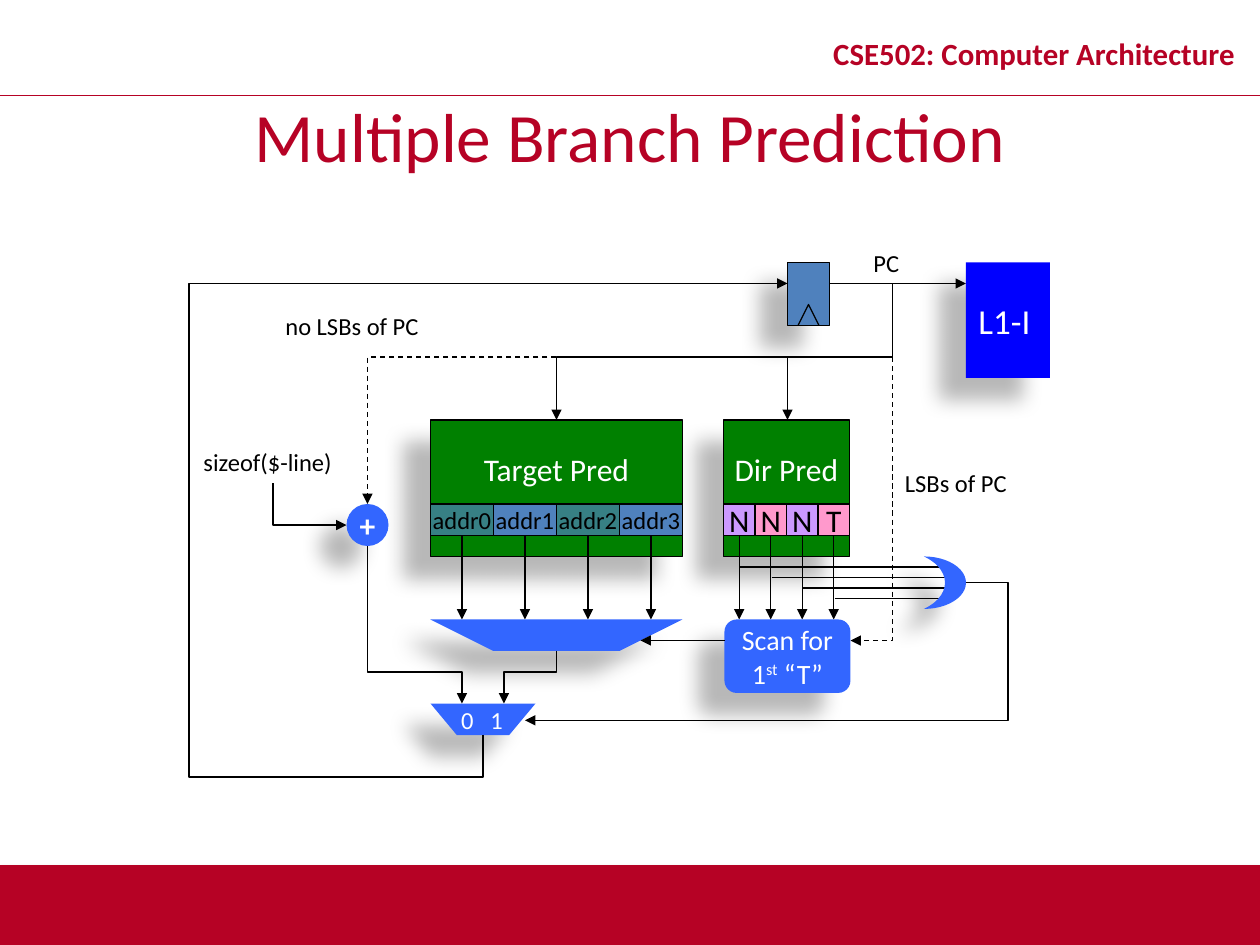
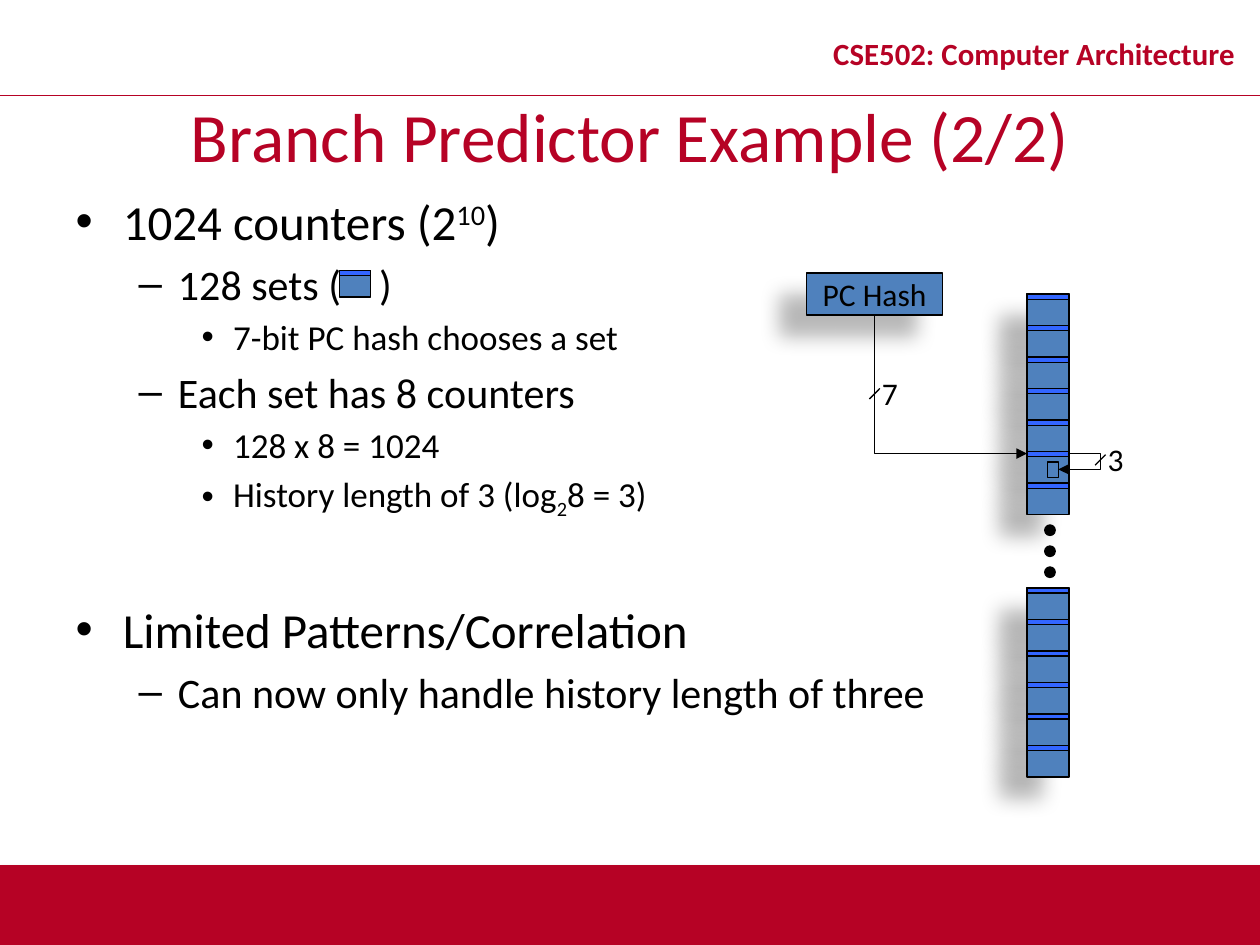
import dataclasses

import lxml.etree
import pptx
import pptx.dml.color
import pptx.enum.dml
import pptx.enum.shapes
import pptx.enum.text
import pptx.oxml.ns
import pptx.util

RGB = pptx.dml.color.RGBColor
SHAPE = pptx.enum.shapes.MSO_SHAPE
ALIGN = pptx.enum.text.PP_ALIGN
ANCHOR = pptx.enum.text.MSO_ANCHOR
qn = pptx.oxml.ns.qn

CRIMSON = RGB(0xB6, 0x02, 0x25)
BLACK = RGB(0, 0, 0)
WHITE = RGB(255, 255, 255)
GREEN = RGB(0, 0x80, 0)
STEEL = RGB(0x4F, 0x81, 0xBD)
ROYAL = RGB(0x33, 0x66, 0xFF)
BLUE = RGB(0, 0, 255)
LILAC = RGB(0xCC, 0x99, 0xFF)
PINK = RGB(0xFF, 0x99, 0xCC)

FONT = "Calibri"
CELL = pptx.util.Inches(1) // 12  # the slide is a grid of 120 columns by 90 rows
COLUMNS, ROWS = 120, 90
# Shadows: opacity in percent, blur and distance in points, angle in degrees
DEEP_SHADOW = (28, 11.8, 19.7, 141)
BAND_SHADOW = (35, 3.1, 1.8, 90)
SUPER, SUB = {"baseline": "30000"}, {"baseline": "-25000"}
WIDE = {"spc": "1630"}


@dataclasses.dataclass
class Box:
    """A region of a page; its parts are placed from its top left cell."""
    page: object
    left: float = 0
    top: float = 0

    def at(self, col, row):
        return round((self.left + col) * CELL), round((self.top + row) * CELL)

    def frame(self, col, row, width, height):
        return *self.at(col, row), round(width * CELL), round(height * CELL)


def write(frame, text, size=18, color=BLACK, bold=None, align=None, level=0,
          before=0, spacing=None):
    """Add one paragraph; text is a string or a list of (string, attributes)."""
    first = frame.paragraphs[0]
    para = frame.add_paragraph() if first.runs else first
    para.level, para.alignment = level, align
    para.space_before = pptx.util.Pt(before)
    para.line_spacing = spacing
    for words, attributes in [(text, {})] if isinstance(text, str) else text:
        span = para.add_run()
        span.text = words
        span.font.name, span.font.size = FONT, pptx.util.Pt(size)
        span.font.bold, span.font.color.rgb = bold, color
        for key, value in attributes.items():
            span._r.get_or_add_rPr().set(key, value)


def add_shadow(shape, shadow):
    shape.shadow.inherit = False
    if shadow:
        opacity, blur, distance, angle = shadow
        effects = shape.element.spPr.find(qn("a:effectLst"))
        outer = lxml.etree.SubElement(
            effects, qn("a:outerShdw"), blurRad=str(pptx.util.Pt(blur)),
            dist=str(pptx.util.Pt(distance)), dir=str(angle * 60000),
            algn="ctr", rotWithShape="0")
        tint = lxml.etree.SubElement(outer, qn("a:srgbClr"), val="000000")
        lxml.etree.SubElement(tint, qn("a:alpha"), val=str(opacity * 1000))


def paint(shape, fill, line=None, shadow=None):
    if fill is None:
        shape.fill.background()
    else:
        shape.fill.solid()
        shape.fill.fore_color.rgb = fill
    if line is None:
        shape.line.fill.background()
    else:
        shape.line.color.rgb = line
        shape.line.width = pptx.util.Pt(0.75)
    add_shadow(shape, shadow)


def add_block(box, col, row, width, height, fill, line=BLACK, shadow=None,
              preset=SHAPE.RECTANGLE):
    shape = box.page.shapes.add_shape(preset, *box.frame(col, row, width, height))
    paint(shape, fill, line, shadow)
    frame = shape.text_frame
    frame.word_wrap = False
    frame.vertical_anchor = ANCHOR.MIDDLE
    frame.margin_left = frame.margin_right = frame.margin_top = frame.margin_bottom = 0
    return shape


def add_label(box, col, row, width, height, text, size=14):
    label = box.page.shapes.add_textbox(*box.frame(col, row, width, height))
    label.text_frame.word_wrap = False
    label.text_frame.auto_size = pptx.enum.text.MSO_AUTO_SIZE.SHAPE_TO_FIT_TEXT
    write(label.text_frame, text, size)


def add_outline(box, points, closed):
    first, *rest = [box.at(*point) for point in points]
    builder = box.page.shapes.build_freeform(*first)
    builder.add_line_segments(rest, close=closed)
    return builder.convert_to_shape()


def add_wire(box, *points, arrow=True, dashed=False, color=BLACK, width=0.75):
    """Draw a straight line as a connector and a bent one as an open outline."""
    if len(points) == 2:
        wire = box.page.shapes.add_connector(
            pptx.enum.shapes.MSO_CONNECTOR.STRAIGHT,
            *box.at(*points[0]), *box.at(*points[1]))
    else:
        wire = add_outline(box, points, closed=False)
        paint(wire, None, color)
    wire.line.color.rgb, wire.line.width = color, pptx.util.Pt(width)
    if dashed:
        wire.line.dash_style = pptx.enum.dml.MSO_LINE.DASH
    if arrow:
        lxml.etree.SubElement(wire.line._get_or_add_ln(), qn("a:tailEnd"), type="triangle")
    if len(points) == 2:
        lxml.etree.SubElement(wire.element.spPr, qn("a:effectLst"))


def add_mux(box, *corners):
    paint(add_outline(box, corners, closed=True), ROYAL, shadow=DEEP_SHADOW)


# Shared look
def dress_master(deck, page):
    """Draw band, rule and course name, then hand them to the slide master."""
    box = Box(page)
    count = len(page.shapes)
    add_block(box, 0, 82.4, COLUMNS, ROWS - 82.4, CRIMSON, None, BAND_SHADOW)
    add_wire(box, (0, 9.1), (COLUMNS, 9.1), arrow=False, color=CRIMSON, width=1)
    header = page.shapes.add_textbox(*box.frame(77, 1.6, 43, 7.5)).text_frame
    header.word_wrap = True
    header.vertical_anchor = ANCHOR.MIDDLE
    write(header, "CSE502: Computer Architecture", 17.6, CRIMSON, True,
          ALIGN.CENTER, spacing=0.8)
    for shape in list(page.shapes)[count:]:
        deck.slide_master.shapes.element.append(shape.element)


def place_holder(holder, box, *place):
    holder.left, holder.top, holder.width, holder.height = box.frame(*place)
    holder.text_frame.auto_size = pptx.enum.text.MSO_AUTO_SIZE.NONE
    return holder.text_frame


def add_page(deck, layout, title):
    page = deck.slides.add_slide(deck.slide_layouts.get_by_name(layout))
    frame = place_holder(page.shapes.title, Box(page), 0, 9.1, COLUMNS, 7.5)
    frame.vertical_anchor = ANCHOR.MIDDLE
    write(frame, title, 39.6, CRIMSON, align=ALIGN.CENTER)
    return page


# Regions of the prediction diagram
def draw_predictor(box, name, entries, width, fills, size, opacity):
    """A predictor whose entries each send an arrow down."""
    body = add_block(box, 0, 0, width * len(entries), 13, GREEN, shadow=DEEP_SHADOW)
    body.text_frame.margin_bottom = round(3.6 * CELL)
    write(body.text_frame, name, 18, WHITE, align=ALIGN.CENTER)
    for index, entry in enumerate(entries):
        fill = fills[index % 2]
        cell = add_block(box, index * width, 8, width, 3, fill)
        if index % 2 == 0 and opacity < 100:
            tint = cell.element.spPr.find(qn("a:solidFill"))[0]
            lxml.etree.SubElement(tint, qn("a:alpha"), val=str(opacity * 1000))
        write(cell.text_frame, entry, size, align=ALIGN.CENTER)
        middle = (index + 0.5) * width
        add_wire(box, (middle, 11), (middle, 19))


def draw_fetch(box):
    """PC register feeding the instruction cache."""
    add_block(box, 0, 2, 4, 6, STEEL, shadow=DEEP_SHADOW)
    add_wire(box, (1, 8), (2, 6), (3, 8), arrow=False)
    add_wire(box, (4, 4), (17, 4))
    cache = add_block(box, 17, 2, 8, 11, BLUE, None, DEEP_SHADOW)
    cache.text_frame.margin_left = pptx.util.Inches(0.1)
    cache.text_frame.word_wrap = True
    write(cache.text_frame, "L1-I", 20, WHITE, align=ALIGN.LEFT)
    add_label(box, 7, 0, 5.3, 4, "PC")
    # PC to both predictors, and its low bits to the scan
    add_wire(box, (10, 4), (10, 11), (0, 11), (0, 17))
    add_wire(box, (0, 11), (-22, 11), (-22, 17))
    add_wire(box, (10, 11), (10, 38), (6, 38), dashed=True)
    add_label(box, 10, 21, 13, 4, "LSBs of PC")


def draw_adder(box):
    """Sequential address: PC without low bits plus the line size."""
    adder = add_block(box, 15, 19, 4, 4, ROYAL, None, DEEP_SHADOW, SHAPE.OVAL)
    write(adder.text_frame, "+", 18, WHITE, True, ALIGN.CENTER)
    add_label(box, 0.2, 13, 14.8, 4, "sizeof($-line)")
    add_wire(box, (8, 17), (8, 21), (15, 21))
    add_wire(box, (35, 5), (17, 5), (17, 19), dashed=True)
    add_label(box, 8, 0, 16, 4, "no LSBs of PC")
    add_wire(box, (17, 23), (17, 35), (26, 35), (26, 38))


def draw_selection(box):
    """Target mux, scan for the first taken branch, and next-PC mux."""
    scan = add_block(box, 28, 0, 12, 7, ROYAL, None, DEEP_SHADOW, SHAPE.ROUNDED_RECTANGLE)
    for line in ("Scan for", [("1", {}), ("st", SUPER), (" “T”", {})]):
        write(scan.text_frame, line, 16, WHITE, align=ALIGN.CENTER)
    add_mux(box, (0, 0), (6, 3), (18, 3), (24, 0))
    add_wire(box, (28, 2), (20, 2))
    add_mux(box, (0, 8), (2.5, 11), (7.5, 11), (10, 8))
    for col, digit in ((2.5, "0"), (5.3, "1")):
        port = add_block(box, col, 8, 2, 3, None, None)
        write(port.text_frame, digit, 14, WHITE, align=ALIGN.CENTER)
    add_wire(box, (12, 3), (12, 5), (7, 5), (7, 8))
    add_wire(box, (5, 11), (5, 15), (-23, 15), (-23, -32), (34, -32))


def draw_any_taken(box):
    """OR of the directions, steering the next-PC mux."""
    for index, end in enumerate((19.5, 20.5, 20.5, 19.5)):
        add_wire(box, (3 * index, index + 1), (end, index + 1), arrow=False)
    gate = add_block(box, 17.5, 0, 4, 5, ROYAL, None, DEEP_SHADOW, SHAPE.MOON)
    gate.element.spPr.get_or_add_xfrm().set("flipH", "1")
    add_wire(box, (21.5, 2.5), (25.5, 2.5), (25.5, 15.6), (-20.5, 15.6))


def build_prediction(page):
    draw_predictor(Box(page, 68.9, 40), "Dir Pred", "NNNT", 3, (LILAC, PINK), 18, 100)
    draw_predictor(Box(page, 41, 40), "Target Pred", [f"addr{n}" for n in range(4)],
                   6, (STEEL, STEEL), 14, 70)
    draw_fetch(Box(page, 75, 23))
    draw_selection(Box(page, 41, 59))
    draw_adder(Box(page, 18, 29))
    draw_any_taken(Box(page, 70.5, 53))


# Regions of the predictor example
def draw_set(box, width=4, height=3, shadow=DEEP_SHADOW):
    add_block(box, 0, 0, width, height, STEEL, shadow=shadow)
    add_block(box, 0, 0, width, height / 6, ROYAL)


def draw_bit_count(box, digit):
    """Slash across a wire, with the number of bits."""
    add_wire(box, (0, 3), (1, 2), arrow=False)
    add_label(box, 0, 0, 4, 4.8, digit, 18)


def draw_counters(box):
    """PC hash choosing one set, and history choosing one counter."""
    for index in range(3):
        add_block(box, 22.7, 24 + 2 * index, 1, 1, BLACK, preset=SHAPE.OVAL)
    pc_hash = add_block(box, 0, 0, 13, 4, STEEL, shadow=DEEP_SHADOW)
    write(pc_hash.text_frame, "PC Hash", align=ALIGN.CENTER)
    for top, count in ((2, 7), (30, 6)):
        for index in range(count):
            draw_set(Box(box.page, box.left + 21, box.top + top + 3 * index))
    add_wire(box, (6.5, 4), (6.5, 17.2), (21, 17.2))
    draw_bit_count(Box(box.page, box.left + 6, box.top + 9), "7")
    add_block(box, 23, 18, 1, 1.5, STEEL)
    add_wire(box, (25, 17.2), (28, 17.2), (28, 18.7), (24, 18.7))
    draw_bit_count(Box(box.page, box.left + 27.5, box.top + 15.3), "3")


def build_example(page):
    points = [
        (0, [("1024 counters (2", {}), ("10", SUPER), (")", {})]),
        (1, [("128 sets (", {}), (" ", WIDE), (")", {})]),
        (2, "7-bit PC hash chooses a set"),
        (1, "Each set has 8 counters"),
        (2, "128 x 8 = 1024"),
        (2, [("History length of 3 (log", {}), ("2", SUB), ("8 = 3)", {})]),
        (0, "Limited Patterns/Correlation"),
        (1, "Can now only handle history length of three"),
    ]
    frame = place_holder(page.placeholders[1], Box(page), 6, 17.6, 108, 64.2)
    for index, (level, text) in enumerate(points):
        size = 28 - 4 * level
        gap = 0.2 * size if level else 45 * (index > 0)
        write(frame, text, size, level=level, before=gap)
    draw_set(Box(page, 32.3, 25.8), 3, 2.5, None)
    draw_counters(Box(page, 76.8, 26))


def main():
    deck = pptx.Presentation()
    deck.slide_width, deck.slide_height = COLUMNS * CELL, ROWS * CELL
    prediction = add_page(deck, "Title Only", "Multiple Branch Prediction")
    dress_master(deck, prediction)
    build_prediction(prediction)
    build_example(add_page(deck, "Title and Content", "Branch Predictor Example (2/2)"))
    deck.save("out.pptx")


if __name__ == "__main__":
    main()
